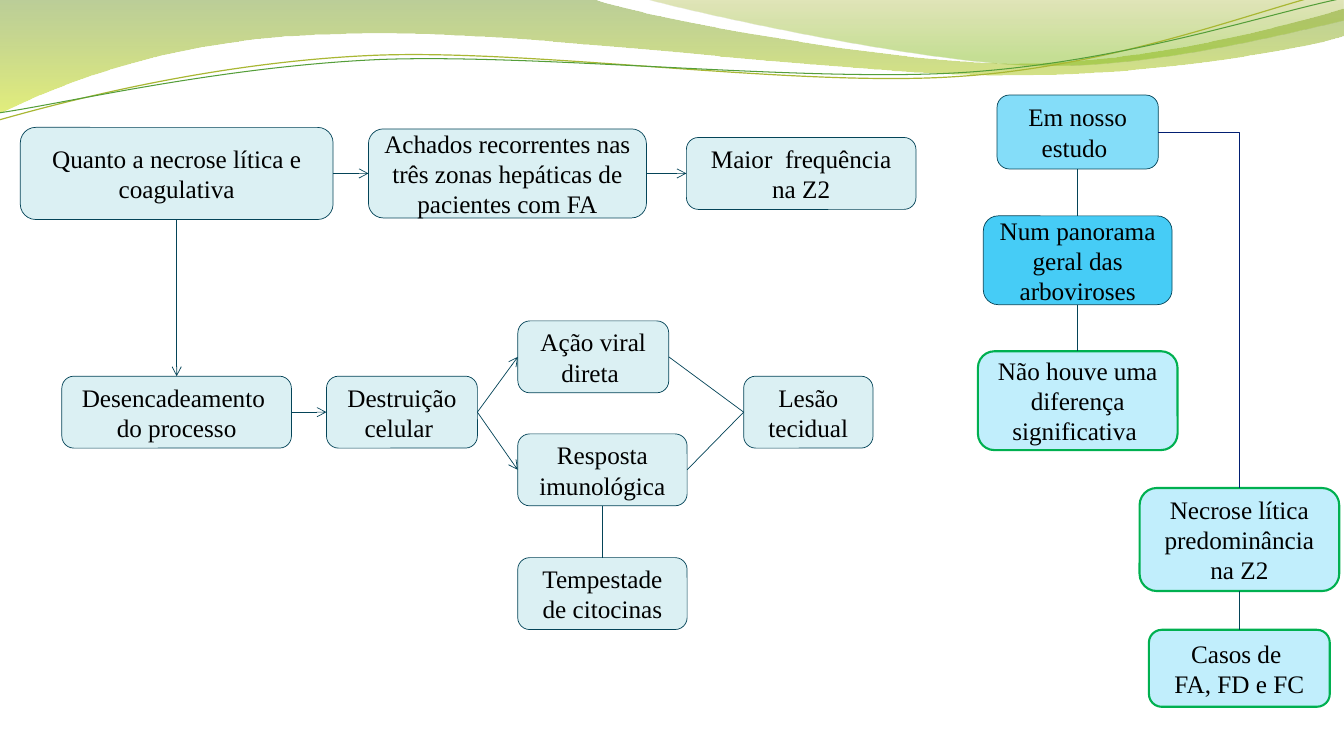
from dataclasses import dataclass

from lxml import etree
from pptx import Presentation
from pptx.dml.color import RGBColor
from pptx.enum.shapes import MSO_CONNECTOR, MSO_SHAPE
from pptx.enum.text import MSO_ANCHOR, PP_ALIGN
from pptx.oxml.ns import qn
from pptx.util import Pt

ROUNDED = MSO_SHAPE.ROUNDED_RECTANGLE
STRAIGHT, ELBOW = MSO_CONNECTOR.STRAIGHT, MSO_CONNECTOR.ELBOW
CENTER, MIDDLE = PP_ALIGN.CENTER, MSO_ANCHOR.MIDDLE
TOP, LEFT, BOTTOM, RIGHT = range(4)
FONT = "Times New Roman"

COLORS = {
    "pale": "DBF0F3", "sky": "84DDF9", "blue": "46CCF6", "ice": "C1EEFC",
    "outline": "044458", "green": "00B050", "navy": "021F72", "text": "000000",
    "olive": "69921C", "lime": "CCE10F", "moss": "9BAA1A", "leaf": "81BA16",
    "thread": "A9B733", "stem": "549E39",
}

Point = tuple[float, float]


@dataclass
class Wave:
    """Outline in points; a segment has one point (line) or three (curve)."""
    start: Point
    segments: list[tuple[Point, ...]]
    stops: tuple[tuple[str, int, float], ...] = ()  # colour, opacity, position
    line: str = ""
    weight: float = 0


@dataclass
class Step:
    """Rounded box placed by its centre."""
    key: str
    lines: tuple[str, ...]
    x: float
    y: float
    width: float
    height: float = 51.4
    fill: str = "pale"
    line: str = "outline"
    weight: float = 0.5


@dataclass
class Link:
    start: str
    start_side: int
    end: str
    end_side: int
    arrow: bool = False
    bent: bool = False
    color: str = "outline"


WAVES = [
    Wave((-1.4, 0), [
        ((422.6, -0.7),),
        ((456.5, 12.2), (636.5, 45.4), (727.9, 45.4)),
        ((818.6, 45.4), (919.4, 18.7), (959.8, 6.5)),
        ((960.5, 25.9),),
        ((943.9, 31.7), (834.5, 54.7), (715.7, 54)),
        ((596.9, 54), (366.5, 20.2), (247, 24.5)),
        ((123.8, 25.9), (43.9, 59.8), (-1.4, 81.4)),
    ], stops=(("olive", 45, 0), ("lime", 55, 1))),
    Wave((459.4, -0.7), [
        ((488.9, 7.9), (654.5, 44.6), (738, 46.8)),
        ((820.8, 49.7), (923, 23), (959.8, 15.1)),
        ((959.8, 0),),
    ], stops=(("moss", 30, 0), ("leaf", 45, 0.8))),
    Wave((-0.7, 85.7), [
        ((45.4, 72.7), (151.2, 44.6), (265.7, 39.6)),
        ((379.4, 34.6), (568.1, 62.6), (683.3, 54.7)),
        ((799.2, 47.5), (900.7, 5.8), (957.6, -7.2)),
    ], line="thread", weight=0.85),
    Wave((-0.7, 80.6), [
        ((44.6, 74.2), (157, 47.5), (271.4, 42.5)),
        ((386.6, 38.2), (573.1, 59), (687.6, 51.8)),
        ((802.1, 44.6), (903.6, 10.1), (959.8, -1.4)),
    ], line="stem", weight=0.75),
]

TOP_ROW, MID_ROW = 123.9, 294.4
START_X, IMMUNE_X, STUDY_X, ZONE_X = 126.2, 430.3, 769.8, 885.3

STEPS = [
    Step("study", ("Em nosso estudo ",), STUDY_X, 94.3, 115.2, 52.8, "sky"),
    Step("no_difference", ("Não houve uma diferença significativa ",),
         STUDY_X, 286.2, 142.6, 70.6, "ice", "green", 1.5),
    Step("panorama", ("Num panorama geral das arboviroses",),
         STUDY_X, 185.9, 134.8, 63.4, "blue"),
    Step("zone", ("Necrose lítica predominância na Z2",),
         ZONE_X, 385.4, 142.6, 73.6, "ice", "green", 1.5),
    Step("cases", ("Casos de ", "FA, FD e FC"),
         ZONE_X, 477.4, 129.2, 55, "ice", "green", 1.5),
    Step("findings", ("Achados recorrentes nas três zonas hepáticas de pacientes com FA",),
         362.5, TOP_ROW, 198.6, 63.6),
    Step("necrosis", ("Quanto a necrose lítica e coagulativa",),
         START_X, TOP_ROW, 223.4, 65.8),
    Step("frequency", ("Maior  frequência na Z2",), 572.3, TOP_ROW, 164),
    Step("trigger", ("Desencadeamento  do processo",), START_X, MID_ROW, 164),
    Step("destruction", ("Destruição celular ",), 287.1, MID_ROW, 107.8),
    Step("viral", ("Ação viral direta ",), 423.8, 254.9, 107.8),
    Step("immune", ("Resposta imunológica",), IMMUNE_X, 335.6, 121),
    Step("storm", ("Tempestade de citocinas",), IMMUNE_X, 424, 121),
    Step("lesion", ("Lesão tecidual",), 577.4, MID_ROW, 92.4),
]

LINKS = [
    Link("panorama", BOTTOM, "no_difference", TOP),
    Link("panorama", TOP, "study", BOTTOM),
    Link("study", RIGHT, "zone", TOP, bent=True, color="navy"),
    Link("zone", BOTTOM, "cases", TOP),
    Link("necrosis", RIGHT, "findings", LEFT, arrow=True),
    Link("findings", RIGHT, "frequency", LEFT, arrow=True),
    Link("necrosis", BOTTOM, "trigger", TOP, arrow=True),
    Link("trigger", RIGHT, "destruction", LEFT, arrow=True),
    Link("destruction", RIGHT, "viral", LEFT, arrow=True),
    Link("destruction", RIGHT, "immune", LEFT, arrow=True),
    Link("immune", BOTTOM, "storm", TOP),
    Link("viral", RIGHT, "lesion", LEFT),
    Link("immune", RIGHT, "lesion", LEFT),
]


def rgb(name: str) -> RGBColor:
    return RGBColor.from_string(COLORS[name])


def bend_segments(shape, wave: Wave) -> None:
    """Join each three line vertices of a curve into one cubic segment."""
    vertices = iter(list(shape._element.iter(qn("a:lnTo"))))
    for segment in wave.segments:
        group = [next(vertices) for _ in segment]
        if len(group) == 1:
            continue
        curve = etree.Element(qn("a:cubicBezTo"))
        group[0].addprevious(curve)
        for vertex in group:
            curve.append(vertex[0])
            vertex.getparent().remove(vertex)


def draw_wave(page, wave: Wave) -> None:
    builder = page.shapes.build_freeform(Pt(wave.start[0]), Pt(wave.start[1]))
    points = [(Pt(x), Pt(y)) for segment in wave.segments for x, y in segment]
    builder.add_line_segments(points, close=bool(wave.stops))
    shape = builder.convert_to_shape()
    bend_segments(shape, wave)
    shape.shadow.inherit = False
    if not wave.stops:
        shape.fill.background()
        shape.line.color.rgb = rgb(wave.line)
        shape.line.width = Pt(wave.weight)
        return
    shape.line.fill.background()
    shape.fill.gradient()
    shape.fill.gradient_angle = 270
    for stop, (color, _, position) in zip(shape.fill.gradient_stops, wave.stops):
        stop.color.rgb = rgb(color)
        stop.position = position
    tints = shape._element.spPr.iter(qn("a:srgbClr"))
    for tint, (_, opacity, _) in zip(tints, wave.stops):
        etree.SubElement(tint, qn("a:alpha")).set("val", str(opacity * 1000))


def draw_step(page, step: Step):
    box = page.shapes.add_shape(
        ROUNDED, Pt(step.x - step.width / 2), Pt(step.y - step.height / 2),
        Pt(step.width), Pt(step.height))
    box.shadow.inherit = False
    box.fill.solid()
    box.fill.fore_color.rgb = rgb(step.fill)
    box.line.color.rgb = rgb(step.line)
    box.line.width = Pt(step.weight)
    frame = box.text_frame
    frame.word_wrap = True
    frame.vertical_anchor = MIDDLE
    for index, line in enumerate(step.lines):
        para = frame.add_paragraph() if index else frame.paragraphs[0]
        para.alignment = CENTER
        span = para.add_run()
        span.text = line
        span.font.name = FONT
        span.font.size = Pt(18)
        span.font.color.rgb = rgb("text")
    return box


def draw_link(page, link: Link, boxes: dict) -> None:
    connector = page.shapes.add_connector(ELBOW if link.bent else STRAIGHT, 0, 0, 0, 0)
    connector.begin_connect(boxes[link.start], link.start_side)
    connector.end_connect(boxes[link.end], link.end_side)
    connector.line.color.rgb = rgb(link.color)
    connector.line.width = Pt(0.5)
    properties = connector._element.spPr
    if link.bent:
        properties.find(qn("a:prstGeom")).set("prst", "bentConnector2")
    if link.arrow:
        etree.SubElement(properties.find(qn("a:ln")), qn("a:tailEnd")).set("type", "arrow")
    etree.SubElement(properties, qn("a:effectLst"))


def main() -> None:
    deck = Presentation()
    deck.slide_width, deck.slide_height = Pt(960), Pt(540)
    page = deck.slides.add_slide(deck.slide_layouts[6])
    # Decorative waves
    for wave in WAVES:
        draw_wave(page, wave)
    # Flow chart
    boxes = {step.key: draw_step(page, step) for step in STEPS}
    for link in LINKS:
        draw_link(page, link, boxes)
    deck.save("out.pptx")


if __name__ == "__main__":
    main()
